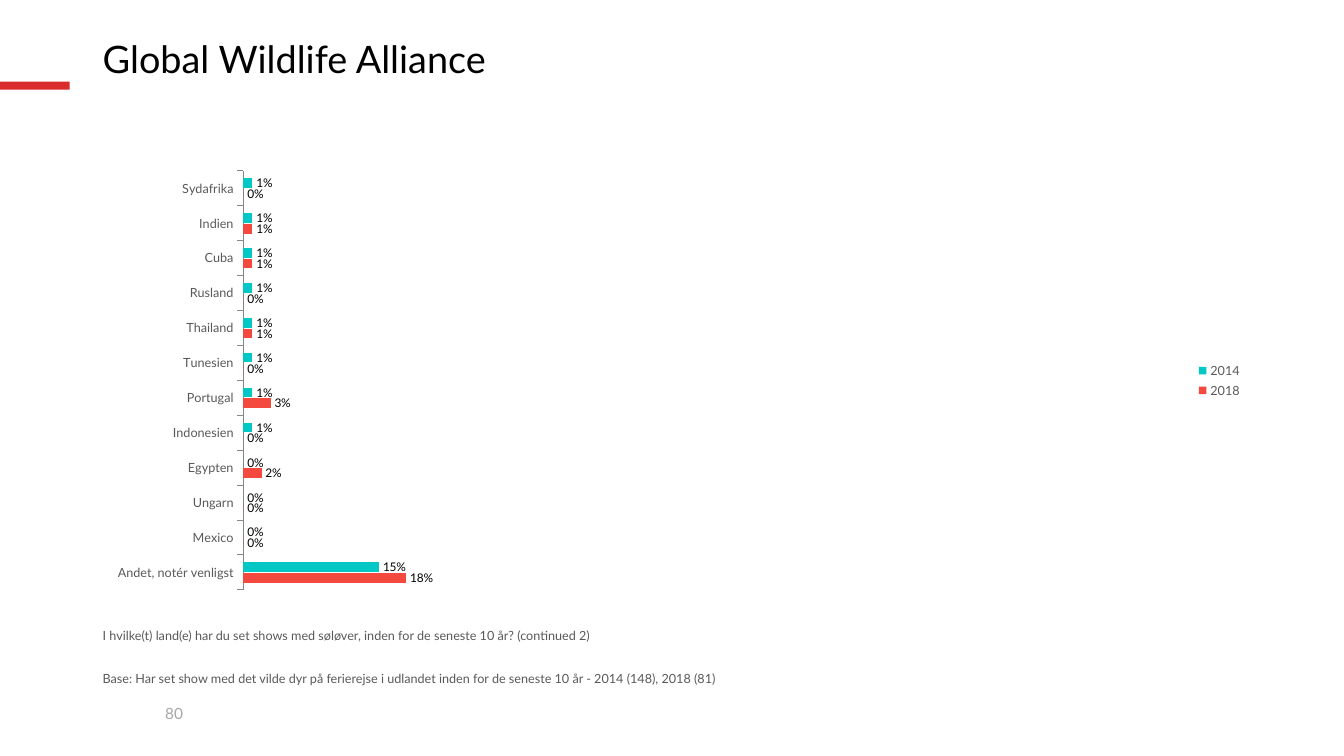
from lxml import etree
from pptx import Presentation
from pptx.chart.data import CategoryChartData
from pptx.dml.color import RGBColor
from pptx.enum.chart import (XL_CHART_TYPE, XL_LABEL_POSITION, XL_LEGEND_POSITION,
                             XL_TICK_LABEL_POSITION, XL_TICK_MARK)
from pptx.enum.shapes import MSO_SHAPE
from pptx.enum.text import MSO_ANCHOR
from pptx.oxml.ns import qn
from pptx.util import Pt

PX = 9144
FONT = "Lato"
BLACK = RGBColor(0x00, 0x00, 0x00)
GREY = RGBColor(0x59, 0x59, 0x59)
AXIS_GREY = RGBColor(0x86, 0x86, 0x86)
PALE_GREY = RGBColor(0xA6, 0xA6, 0xA6)
ACCENT_RED = RGBColor(0xDA, 0x2C, 0x2D)
CORAL = RGBColor(0xF3, 0x49, 0x3E)
TURQUOISE = RGBColor(0x02, 0xC8, 0xC5)

BAR_CLUSTERED = XL_CHART_TYPE.BAR_CLUSTERED
OUTSIDE_END = XL_LABEL_POSITION.OUTSIDE_END
LEGEND_RIGHT = XL_LEGEND_POSITION.RIGHT
LABELS_LOW = XL_TICK_LABEL_POSITION.LOW
TICK_OUTSIDE = XL_TICK_MARK.OUTSIDE
TICK_NONE = XL_TICK_MARK.NONE
TOP, MIDDLE = MSO_ANCHOR.TOP, MSO_ANCHOR.MIDDLE
RECTANGLE = MSO_SHAPE.RECTANGLE

SLIDE_SIZE = (1333, 750)
ACCENT_BOX = (0, 81, 69, 8)
TITLE_BOX = (92, 35, 1150, 51)
CHART_BOX = (92, 161, 1150, 433)
FOOTER_BOX = (92, 618, 1150, 105)
PLOT_LAYOUT = {"x": 0.13, "y": 0.02, "w": 0.78, "h": 0.96}

TITLE = "Global Wildlife Alliance"
COUNTRIES = ["Andet, notér venligst", "Mexico", "Ungarn", "Egypten", "Indonesien", "Portugal",
             "Tunesien", "Thailand", "Rusland", "Cuba", "Indien", "Sydafrika"]
SHARES = [
    ("2018", CORAL, [0.18, 0, 0, 0.02, 0, 0.03, 0, 0.01, 0, 0.01, 0.01, 0]),
    ("2014", TURQUOISE, [0.15, 0, 0, 0] + [0.01] * 8),
]
QUESTION = ("I hvilke(t) land(e) har du set shows med søløver, "
            "inden for de seneste 10 år? (continued 2)")
BASE = ("Base: Har set show med det vilde dyr på ferierejse i udlandet "
        "inden for de seneste 10 år - 2014 (148), 2018 (81)")


def scaled(box):
    """Turn px lengths into EMU."""
    return [length * PX for length in box]


def set_values(target, values):
    """Set each named attribute on the target."""
    for name, value in values.items():
        setattr(target, name, value)


def style_font(font, size, color):
    """Give a font the slide's typeface, a size and a colour."""
    set_values(font, {"name": FONT, "size": Pt(size)})
    font.color.rgb = color


def add_text(slide, box, text, size, color, anchor=TOP, line_spacing=1.0):
    """Add a wrapped one-paragraph text box."""
    frame = slide.shapes.add_textbox(*scaled(box)).text_frame
    set_values(frame, {"word_wrap": True, "vertical_anchor": anchor})
    paragraph = frame.paragraphs[0]
    set_values(paragraph, {"text": text, "line_spacing": line_spacing})
    style_font(paragraph.runs[0].font, size, color)


def add_accent(slide, box):
    """Draw the red bar at the slide edge."""
    shape = slide.shapes.add_shape(RECTANGLE, *scaled(box))
    shape.shadow.inherit = False
    shape.fill.solid()
    shape.fill.fore_color.rgb = ACCENT_RED
    shape.line.fill.background()


def fix_plot_area(chart):
    """Place the inner plot area at fixed fractions of the chart."""
    plot_area = chart.element.find(".//" + qn("c:plotArea"))
    for layout in plot_area.findall(qn("c:layout")):
        plot_area.remove(layout)
    layout = etree.Element(qn("c:layout"))
    manual = etree.SubElement(layout, qn("c:manualLayout"))
    settings = {"layoutTarget": "inner", "xMode": "edge", "yMode": "edge", **PLOT_LAYOUT}
    for name, value in settings.items():
        etree.SubElement(manual, qn("c:" + name)).set("val", str(value))
    plot_area.insert(0, layout)


def style_axes(chart):
    """Show the country axis and hide the share axis."""
    countries, shares = chart.category_axis, chart.value_axis
    set_values(countries, {"tick_label_position": LABELS_LOW, "major_tick_mark": TICK_OUTSIDE,
                           "minor_tick_mark": TICK_NONE, "has_major_gridlines": False})
    style_font(countries.tick_labels.font, 9, GREY)
    countries.format.line.color.rgb = AXIS_GREY
    countries.format.line.width = Pt(0.75)
    set_values(shares, {"minimum_scale": 0, "maximum_scale": 1, "major_unit": 0.1,
                        "has_major_gridlines": False, "visible": False})


def add_share_chart(slide, box):
    """Add the clustered bars of shares by country and year."""
    data = CategoryChartData(number_format="0.00%")
    data.categories = COUNTRIES
    for year, _, values in SHARES:
        data.add_series(year, values)
    chart = slide.shapes.add_chart(BAR_CLUSTERED, *scaled(box), data).chart
    set_values(chart, {"has_title": False, "has_legend": True})
    style_font(chart.font, 18, BLACK)
    set_values(chart.legend, {"position": LEGEND_RIGHT, "include_in_layout": False})
    style_font(chart.legend.font, 9, GREY)
    style_axes(chart)
    plot = chart.plots[0]
    set_values(plot, {"gap_width": 150, "overlap": -10, "vary_by_categories": False})
    for series, (_, color, _) in zip(plot.series, SHARES):
        series.invert_if_negative = False
        series.format.fill.solid()
        series.format.fill.fore_color.rgb = color
        labels = series.data_labels
        set_values(labels, {"show_value": True, "position": OUTSIDE_END,
                            "number_format": "0%", "number_format_is_linked": False})
        style_font(labels.font, 8.5, BLACK)
    fix_plot_area(chart)


def add_footer(slide, box):
    """Add the question, the base and the page number."""
    left, top, width, _ = box
    add_text(slide, (left, top, width, 43), QUESTION, 9, GREY)
    add_text(slide, (left, top + 43, width, 28), BASE, 9, GREY)
    add_text(slide, (left + 62, top + 76, 68, 29), "80", 11, PALE_GREY)


def main():
    """Build and save the slide."""
    presentation = Presentation()
    presentation.slide_width, presentation.slide_height = scaled(SLIDE_SIZE)
    slide = presentation.slides.add_slide(presentation.slide_layouts[6])
    add_accent(slide, ACCENT_BOX)
    add_text(slide, TITLE_BOX, TITLE, 27, BLACK, MIDDLE, 0.9)
    add_share_chart(slide, CHART_BOX)
    add_footer(slide, FOOTER_BOX)
    presentation.save("out.pptx")


if __name__ == "__main__":
    main()
